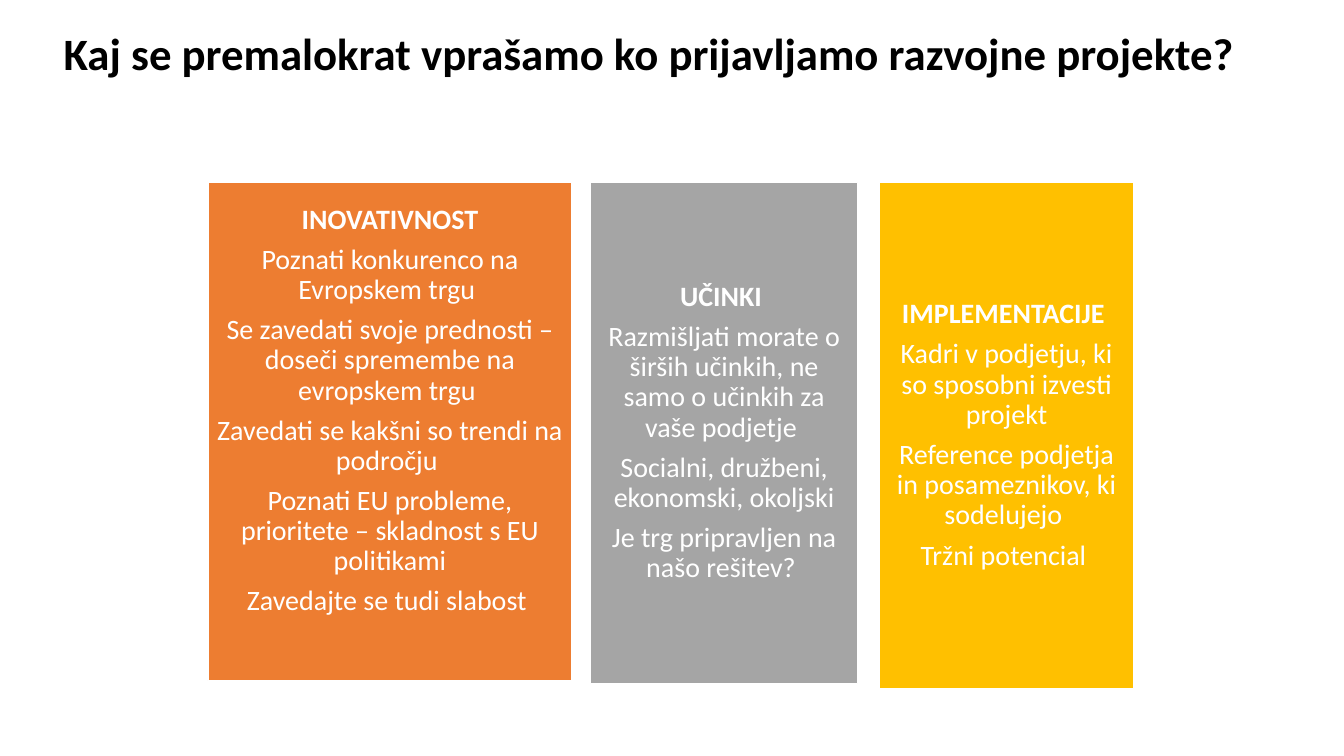
from pptx import Presentation
from pptx.dml.color import RGBColor
from pptx.enum.shapes import MSO_SHAPE
from pptx.enum.text import MSO_ANCHOR, MSO_AUTO_SIZE, PP_ALIGN
from pptx.util import Pt


def rgb(value):
    return RGBColor.from_string(value)


def style(p, size, color, bold, align):
    p.alignment = align
    p.font.name = "Calibri"
    p.font.size = Pt(size)
    p.font.bold = bold
    p.font.color.rgb = rgb(color)


prs = Presentation()
prs.slide_width, prs.slide_height = Pt(960), Pt(540)
s = prs.slides.add_slide(prs.slide_layouts[5])

title = s.shapes.title
title.left, title.top, title.width, title.height = Pt(38.2), Pt(14.4), Pt(858.2), Pt(46)
tf = title.text_frame
tf.text = "Kaj se premalokrat vprašamo ko prijavljamo razvojne projekte?"
tf.word_wrap = False
tf.auto_size = MSO_AUTO_SIZE.NONE
tf.vertical_anchor = MSO_ANCHOR.TOP
style(tf.paragraphs[0], 32, "000000", True, PP_ALIGN.LEFT)

columns = [
    ((148.6, 129.9, 260, 356.4), "ED7D31", 35, [
        "INOVATIVNOST",
        "Poznati konkurenco na Evropskem trgu ",
        "Se zavedati svoje prednosti – doseči spremembe na evropskem trgu ",
        "Zavedati se kakšni so trendi na področju ",
        "Poznati EU probleme, prioritete – skladnost s EU politikami",
        "Zavedajte se tudi slabost ",
    ]),
    ((422, 130.3, 190.6, 358), "A5A5A5", 6, [
        "UČINKI ",
        "Razmišljati morate o širših učinkih, ne samo o učinkih za vaše podjetje ",
        "Socialni, družbeni, ekonomski, okoljski",
        "Je trg pripravljen na našo rešitev? ",
    ]),
    ((628, 130.3, 182, 361.4), "FFC000", 6, [
        "IMPLEMENTACIJE ",
        "Kadri v podjetju, ki so sposobni izvesti projekt",
        "Reference podjetja in posameznikov, ki sodelujejo ",
        "Tržni potencial ",
    ]),
]

for box, color, bottom, lines in columns:
    sp = s.shapes.add_shape(MSO_SHAPE.RECTANGLE, *map(Pt, box))
    sp.shadow.inherit = False
    sp.fill.solid()
    sp.fill.fore_color.rgb = rgb(color)
    sp.line.color.rgb = rgb("FFFFFF")
    sp.line.width = Pt(1)
    tf = sp.text_frame
    tf.word_wrap = True
    tf.vertical_anchor = MSO_ANCHOR.MIDDLE
    tf.margin_left = tf.margin_right = tf.margin_top = Pt(6)
    tf.margin_bottom = Pt(bottom)
    for i, line in enumerate(lines):
        p = tf.add_paragraph() if i else tf.paragraphs[0]
        p.text = line
        p.line_spacing = 0.9
        p.space_after = Pt(7)
        style(p, 20, "FFFFFF", i == 0, PP_ALIGN.CENTER)

prs.save("out.pptx")
